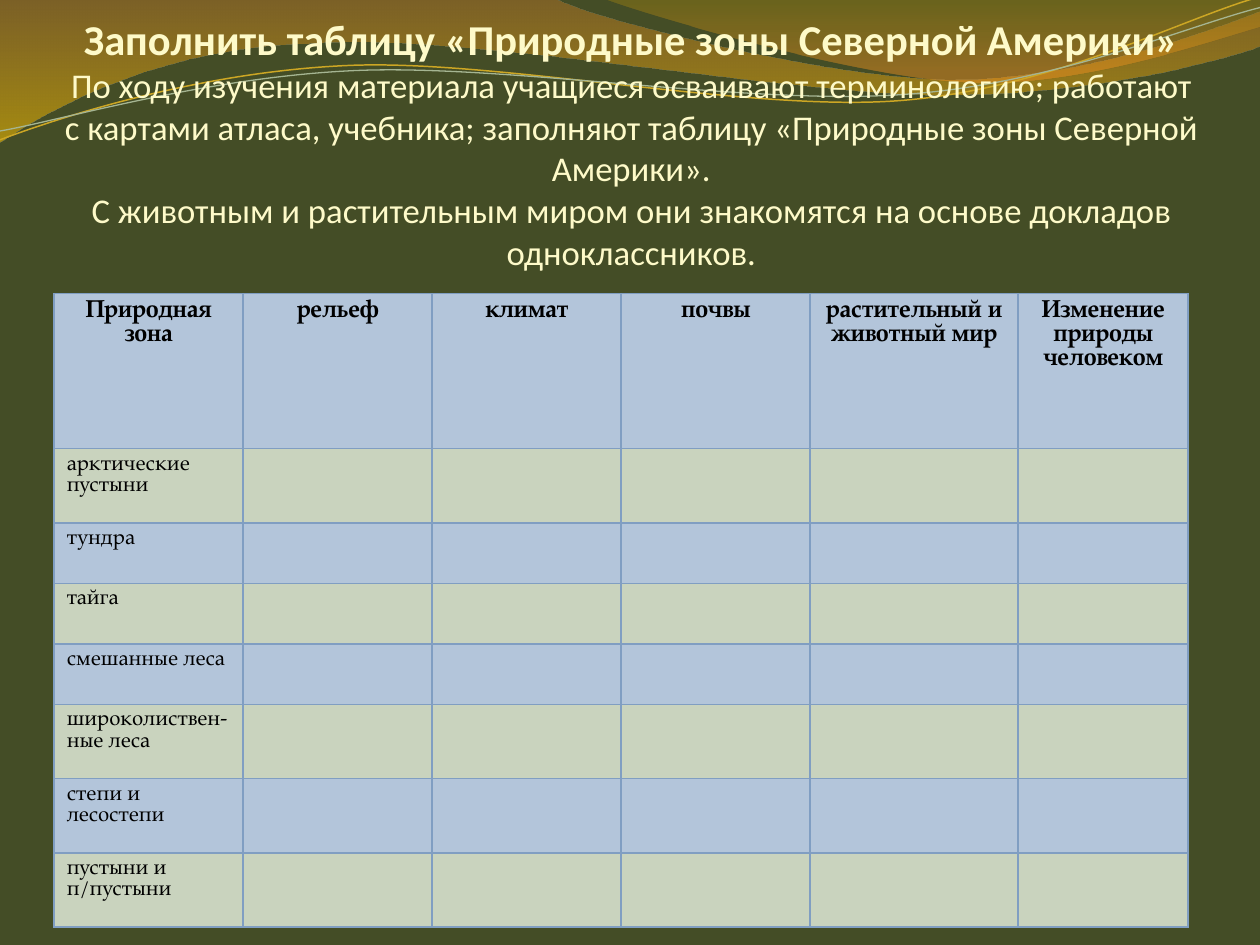
from pptx import Presentation
from pptx.dml.color import RGBColor
from pptx.enum.text import MSO_ANCHOR, MSO_AUTO_SIZE, PP_ALIGN
from pptx.oxml import parse_xml
from pptx.oxml.ns import nsdecls, qn
from pptx.util import Inches, Pt

CENTER, LEFT = PP_ALIGN.CENTER, PP_ALIGN.LEFT
BOTTOM, NO_FIT = MSO_ANCHOR.BOTTOM, MSO_AUTO_SIZE.NONE
BLUE, GREEN, BORDER = "B3C5DA", "C9D3BE", "809EC2"

TITLE = [
    ("Заполнить таблицу «Природные зоны Северной Америки»", 24.3, True),
    ("По ходу изучения материала учащиеся осваивают терминологию; работают "
     "с картами атласа, учебника; заполняют таблицу «Природные зоны Северной "
     "Америки».", 19.8, False),
    ("С животным и растительным миром они знакомятся на основе докладов "
     "одноклассников.", 19.8, False),
]
HEADERS = ["Природная\nзона", "рельеф", "климат", "почвы",
           "растительный и животный мир", "Изменение природы человеком"]
ZONES = ["арктические\nпустыни", "тундра", "тайга", "смешанные леса",
         "широколиствен-\nные леса", "степи и лесостепи", "пустыни и п/пустыни"]
COLUMNS = [1.5, 1.5, 1.5, 1.5, 1.65, 1.35]
ROWS = [1.23, 0.59, 0.48, 0.48, 0.48, 0.59, 0.59, 0.59]

# Each outline is a start point followed by steps:
# two numbers for a straight line, six for a cubic curve.
LEFT_WAVE = [
    (0, 0), (4.4, -0.01), (4.76, 0.17, 6.64, 0.63, 7.58, 0.63),
    (8.53, 0.63, 9.58, 0.26, 10, 0.09), (10.01, 0.36),
    (9.83, 0.44, 8.7, 0.76, 7.46, 0.75), (6.22, 0.75, 3.82, 0.28, 2.57, 0.34),
    (1.29, 0.36, 0.46, 0.83, -0.01, 1.13)]
RIGHT_WAVE = [
    (4.79, -0.01), (5.09, 0.11, 6.82, 0.62, 7.69, 0.65),
    (8.56, 0.69, 9.61, 0.32, 10, 0.21), (10, 0)]
GOLD_LINE = [
    (0, 1.11), (0.48, 0.93, 1.58, 0.57, 2.77, 0.52),
    (3.95, 0.47, 5.93, 0.89, 7.13, 0.8), (8.33, 0.71, 9.38, 0.15, 9.98, -0.02)]
SAGE_LINE = [
    (0, 1.04), (0.47, 0.96, 1.64, 0.61, 2.83, 0.56),
    (4.03, 0.51, 5.97, 0.84, 7.17, 0.75), (8.36, 0.67, 9.41, 0.21, 10, 0.06)]


def rgb(value):
    return RGBColor.from_string(value)


def add_outline(s, outline, close):
    """Draw all points with straight lines, then join each curve's three into one."""
    points = [(Inches(step[i]), Inches(step[i + 1]))
              for step in outline for i in range(0, len(step), 2)]
    builder = s.shapes.build_freeform(*points[0])
    builder.add_line_segments(points[1:], close=close)
    sp = builder.convert_to_shape()
    sp.shadow.inherit = False
    lines = iter(list(sp.element.iter(qn("a:lnTo"))))
    for step in outline[1:]:
        parts = [next(lines) for _ in range(len(step) // 2)]
        if len(parts) == 3:
            curve = parse_xml(f'<a:cubicBezTo {nsdecls("a")}/>')
            parts[0].addprevious(curve)
            for part in parts:
                curve.append(part[0])
                part.getparent().remove(part)
    return sp


def add_wave(s, outline, stops):
    """Fill a closed outline from top to bottom; stops are (position, colour, opacity)."""
    sp = add_outline(s, outline, True)
    sp.line.fill.background()
    sp.fill.gradient()
    sp.fill.gradient_angle = 270
    for stop, (position, color, _) in zip(sp.fill.gradient_stops, stops):
        stop.position = position
        stop.color.rgb = rgb(color)
    for clr, (_, _, opacity) in zip(sp.element.iter(qn("a:srgbClr")), stops):
        clr.append(parse_xml(f'<a:alpha {nsdecls("a")} val="{int(opacity * 100000)}"/>'))


def add_curve(s, outline, color, width):
    sp = add_outline(s, outline, False)
    sp.fill.background()
    sp.line.color.rgb = rgb(color)
    sp.line.width = Pt(width)


def format_paragraph(p, font, size, color, bold, align):
    p.alignment = align
    for r in p.runs:
        r.font.name, r.font.size, r.font.bold = font, Pt(size), bold
        r.font.color.rgb = rgb(color)


def set_title(s):
    title = s.shapes.title
    title.left, title.top = Inches(0.51), Inches(0.21)
    title.width, title.height = Inches(9), Inches(1.95)
    tf = title.text_frame
    tf.auto_size, tf.word_wrap, tf.vertical_anchor = NO_FIT, True, BOTTOM
    tf.margin_left = tf.margin_right = tf.margin_bottom = 0
    tf.text = "\n".join(text for text, _, _ in TITLE)
    for p, (_, size, bold) in zip(tf.paragraphs, TITLE):
        format_paragraph(p, "Calibri", size, "FEFAC9", bold, CENTER)
    title.element.getparent().append(title.element)  # in front of the waves


def set_borders(cell, color, width):
    tc_pr = cell._tc.get_or_add_tcPr()
    for side in "LRTB":
        tc_pr.append(parse_xml(
            f'<a:ln{side} {nsdecls("a")} w="{Pt(width)}"><a:solidFill>'
            f'<a:srgbClr val="{color}"/></a:solidFill></a:ln{side}>'))


def add_zone_table(s):
    texts = [HEADERS] + [[zone] + [""] * (len(COLUMNS) - 1) for zone in ZONES]
    table = s.shapes.add_table(
        len(ROWS), len(COLUMNS), Inches(0.43), Inches(2.33),
        Inches(sum(COLUMNS)), Inches(sum(ROWS))).table
    for column, width in zip(table.columns, COLUMNS):
        column.width = Inches(width)
    for i, (row, height) in enumerate(zip(table.rows, ROWS)):
        row.height = Inches(height)
        size, bold, align = (12, False, LEFT) if i else (14, True, CENTER)
        for cell, text in zip(row.cells, texts[i]):
            set_borders(cell, BORDER, 1)
            cell.fill.solid()
            cell.fill.fore_color.rgb = rgb(GREEN if i % 2 else BLUE)
            cell.text_frame.text = text
            for p in cell.text_frame.paragraphs:
                format_paragraph(p, "TeX Gyre Pagella", size, "000000", bold, align)


def main():
    prs = Presentation()
    prs.slide_width, prs.slide_height = Inches(10), Inches(7.5)
    s = prs.slides.add_slide(prs.slide_layouts[5])
    s.background.fill.solid()
    s.background.fill.fore_color.rgb = rgb("444D26")
    add_wave(s, LEFT_WAVE, [(0, "C07A28", 0.45), (1, "F7BF00", 0.55)])
    add_wave(s, RIGHT_WAVE, [(0, "C09709", 0.3), (0.8, "F59320", 0.45)])
    add_curve(s, GOLD_LINE, "CCA624", 0.85)
    add_curve(s, SAGE_LINE, "A5B592", 0.75)
    set_title(s)
    add_zone_table(s)
    prs.save("out.pptx")


if __name__ == "__main__":
    main()
